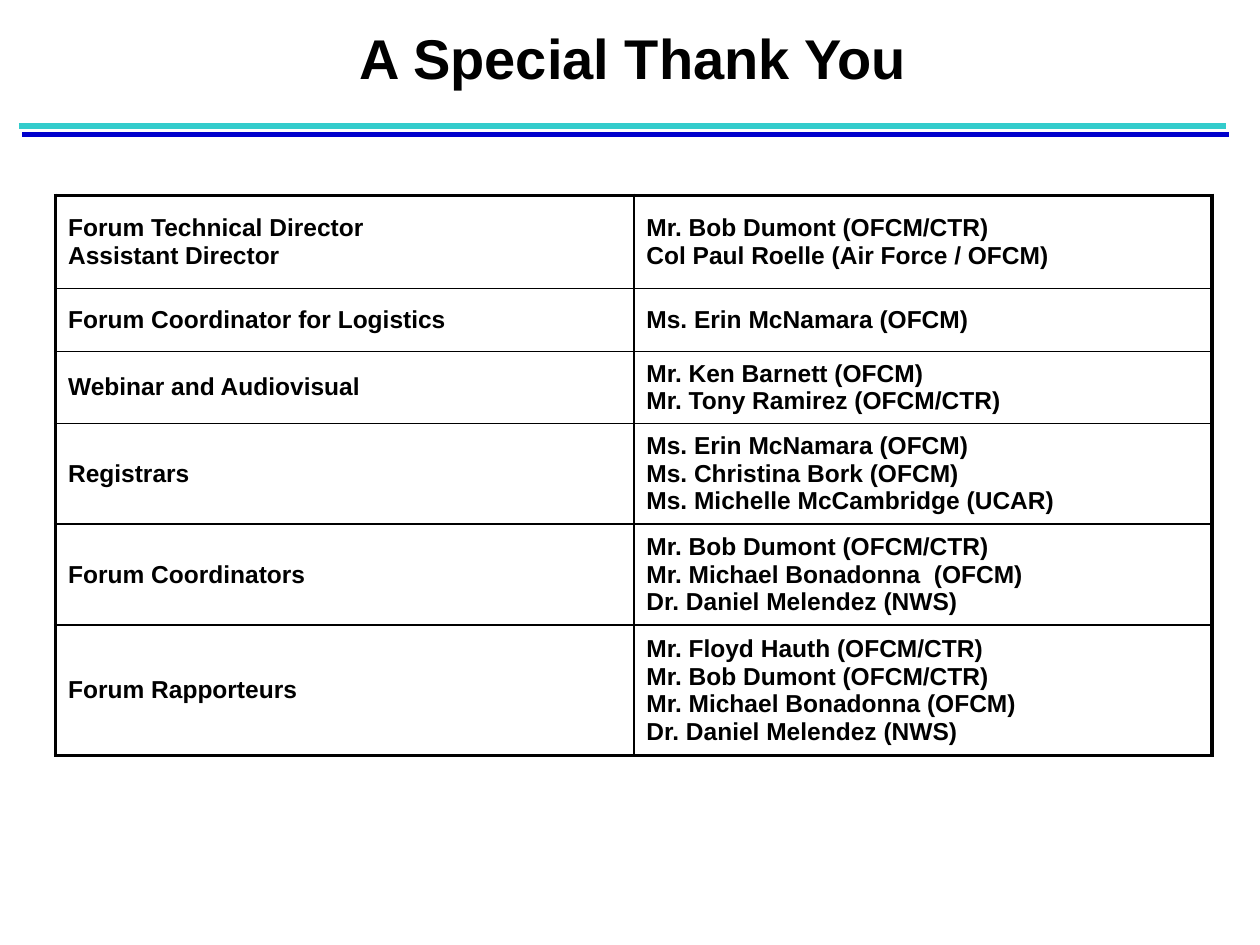
from lxml import etree
from pptx import Presentation
from pptx.dml.color import RGBColor
from pptx.enum.shapes import MSO_CONNECTOR
from pptx.enum.text import MSO_ANCHOR, MSO_AUTO_SIZE, PP_ALIGN
from pptx.oxml import parse_xml
from pptx.oxml.ns import nsdecls, qn
from pptx.util import Inches, Pt

STRAIGHT = MSO_CONNECTOR.STRAIGHT
MIDDLE = MSO_ANCHOR.MIDDLE
CENTER = PP_ALIGN.CENTER
GROW = MSO_AUTO_SIZE.SHAPE_TO_FIT_TEXT

COLORS = {"ink": "000000", "rule": "33CCCC", "rule_shadow": "0000CC"}
FONT = "Arial"
WIDTH, HEIGHT = 10, 7.5
OUTER, INNER = 2.25, 1  # table border widths in points

THANKS = [
    (["Forum Technical Director", "Assistant Director"],
     ["Mr. Bob Dumont (OFCM/CTR)", "Col Paul Roelle (Air Force / OFCM)"]),
    (["Forum Coordinator for Logistics"], ["Ms. Erin McNamara (OFCM)"]),
    (["Webinar and Audiovisual"],
     ["Mr. Ken Barnett (OFCM)", "Mr. Tony Ramirez (OFCM/CTR)"]),
    (["Registrars"],
     ["Ms. Erin McNamara (OFCM)", "Ms. Christina Bork (OFCM)",
      "Ms. Michelle McCambridge (UCAR)"]),
    (["Forum Coordinators"],
     ["Mr. Bob Dumont (OFCM/CTR)", "Mr. Michael Bonadonna  (OFCM)",
      "Dr. Daniel Melendez (NWS)"]),
    (["Forum Rapporteurs"],
     ["Mr. Floyd Hauth (OFCM/CTR)", "Mr. Bob Dumont (OFCM/CTR)",
      "Mr. Michael Bonadonna (OFCM)", "Dr. Daniel Melendez (NWS)"]),
]
ROW_HEIGHTS = [0.74, 0.5, 0.57, 0.8, 0.8, 1.03]


class SlideBuilder:
    """Holds the text style and the current slide; lengths are in inches."""

    def __init__(self, deck):
        self.slide = deck.slides.add_slide(deck.slide_layouts[6])

    def style(self, para, size):
        for span in para.runs:
            span.font.name = FONT
            span.font.size = Pt(size)
            span.font.bold = True
            span.font.color.rgb = RGBColor.from_string(COLORS["ink"])

    def title(self, text, left, top, width, height):
        box = self.slide.shapes.add_textbox(
            Inches(left), Inches(top), Inches(width), Inches(height))
        frame = box.text_frame
        frame.word_wrap = True
        frame.auto_size = GROW
        frame.text = text
        para = frame.paragraphs[0]
        para.alignment = CENTER
        para.line_spacing = 0.85
        self.style(para, 32)

    def shadowed_rule(self, left, right, top):
        rule = self.slide.shapes.add_connector(
            STRAIGHT, Inches(left), Inches(top), Inches(right), Inches(top))
        rule.line.color.rgb = RGBColor.from_string(COLORS["rule"])
        rule.line.width = Pt(3)
        # Hard blue shadow: 5.4 pt away, at 68 degrees
        rule.line._get_or_add_ln().addnext(parse_xml(
            f'<a:effectLst {nsdecls("a")}>'
            f'<a:outerShdw dist="{Pt(5.4)}" dir="{68 * 60000}" algn="ctr" rotWithShape="0">'
            f'<a:srgbClr val="{COLORS["rule_shadow"]}"/></a:outerShdw></a:effectLst>'))

    def border(self, cell, widths):
        properties = cell._tc.get_or_add_tcPr()
        for side, width in widths.items():
            line = etree.SubElement(properties, qn(f"a:ln{side}"), w=str(Pt(width)))
            fill = etree.SubElement(line, qn("a:solidFill"))
            etree.SubElement(fill, qn("a:srgbClr"), val=COLORS["ink"])

    def table(self, rows, left, top, width, heights):
        last_row, last_column = len(rows) - 1, len(rows[0]) - 1
        table = self.slide.shapes.add_table(
            len(rows), len(rows[0]), Inches(left), Inches(top),
            Inches(width), Inches(sum(heights))).table
        table.first_row = table.horz_banding = False
        for r, (row, height) in enumerate(zip(rows, heights)):
            table.rows[r].height = Inches(height)
            for c, lines in enumerate(row):
                cell = table.cell(r, c)
                cell.vertical_anchor = MIDDLE
                cell.text_frame.text = "\n".join(lines)
                for para in cell.text_frame.paragraphs:
                    self.style(para, 14)
                self.border(cell, {
                    "L": OUTER if c == 0 else INNER,
                    "R": OUTER if c == last_column else INNER,
                    "T": OUTER if r == 0 else INNER,
                    "B": OUTER if r == last_row else INNER,
                })
                cell.fill.background()


def main():
    deck = Presentation()
    deck.slide_width, deck.slide_height = Inches(WIDTH), Inches(HEIGHT)
    page = SlideBuilder(deck)

    # Heading
    page.title("A Special Thank You", 0.76, 0.22, 8.53, 0.56)
    page.shadowed_rule(0.15, 9.73, 1)

    # Roles and people
    page.table(THANKS, 0.44, 1.55, 9.18, ROW_HEIGHTS)

    deck.save("out.pptx")


if __name__ == "__main__":
    main()
